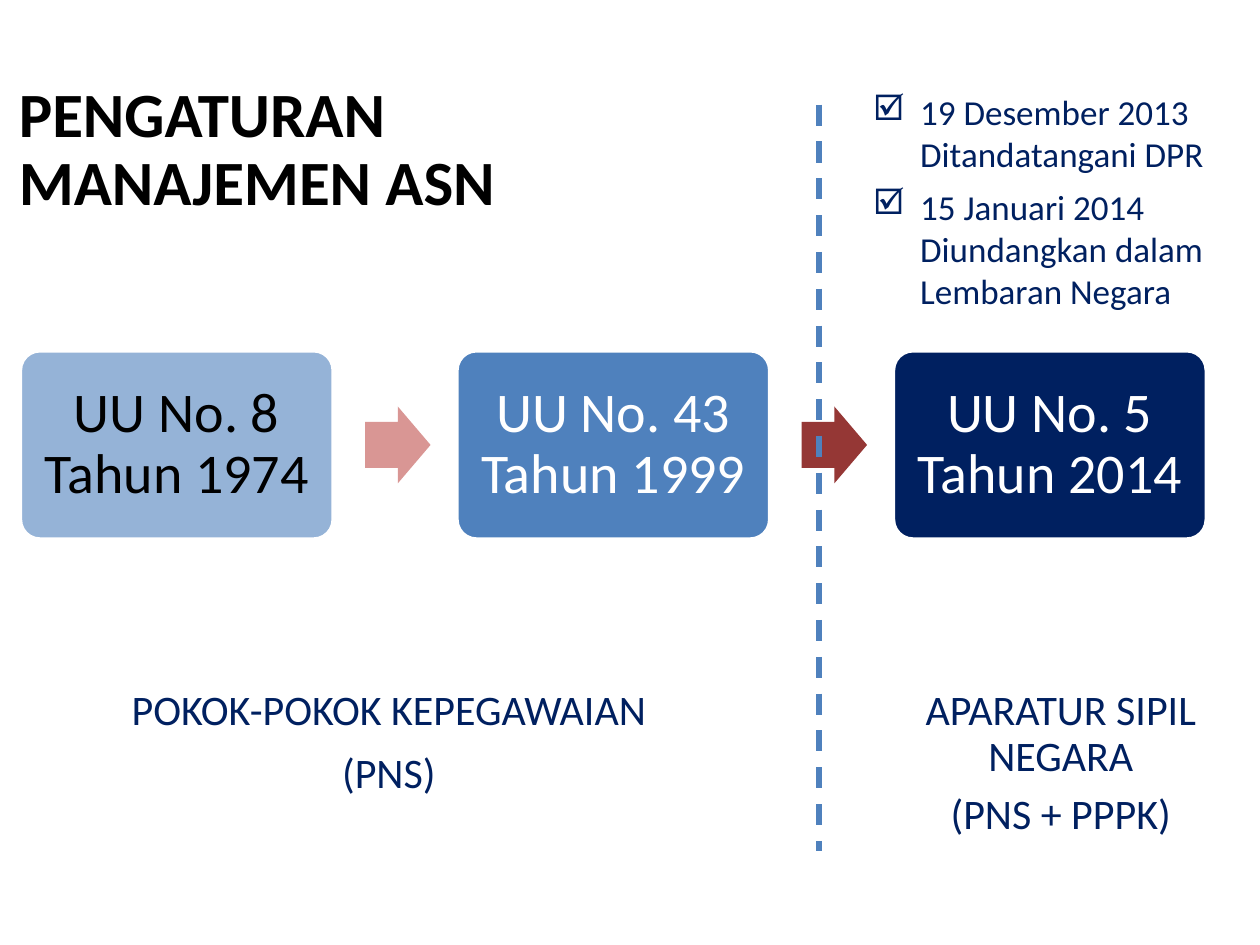
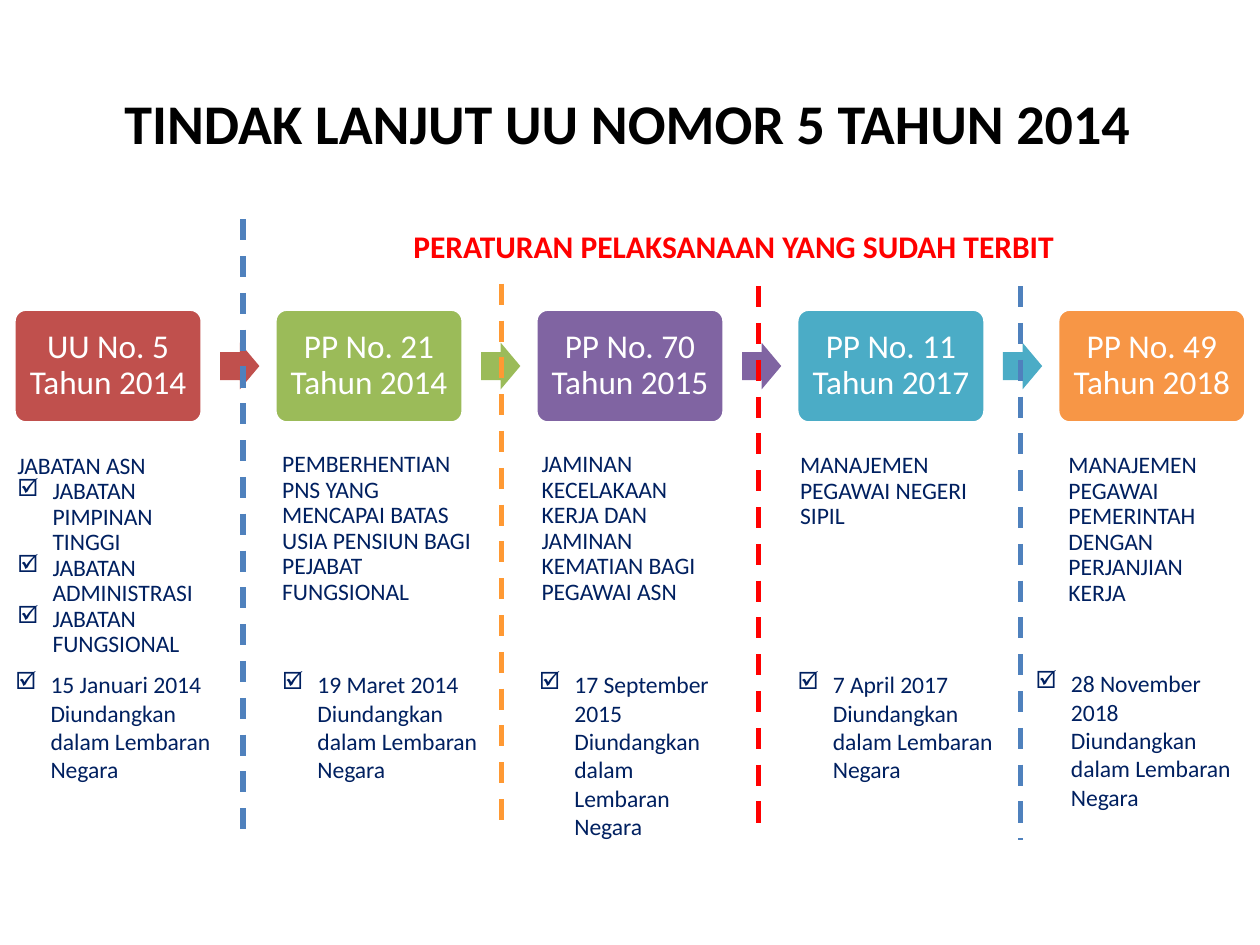
from dataclasses import dataclass

from lxml import etree
from pptx import Presentation
from pptx.dml.color import RGBColor
from pptx.enum.dml import MSO_LINE
from pptx.enum.shapes import MSO_CONNECTOR, MSO_SHAPE
from pptx.enum.text import MSO_ANCHOR, PP_ALIGN
from pptx.oxml.ns import qn
from pptx.shapes.base import BaseShape
from pptx.slide import Slide
from pptx.util import Cm, Pt

ROUND, ARROW = MSO_SHAPE.ROUNDED_RECTANGLE, MSO_SHAPE.RIGHT_ARROW
STRAIGHT, DASH = MSO_CONNECTOR.STRAIGHT, MSO_LINE.DASH
TOP, MIDDLE, BOTTOM = MSO_ANCHOR.TOP, MSO_ANCHOR.MIDDLE, MSO_ANCHOR.BOTTOM
LEFT, CENTER = PP_ALIGN.LEFT, PP_ALIGN.CENTER

FONT = "Calibri"
COLORS = {
    "black": "000000", "white": "FFFFFF", "navy": "002060", "pale": "95B3D7",
    "blue": "4F81BD", "pink": "D99694", "maroon": "953735", "brick": "C0504D",
    "green": "9BBB59", "purple": "8064A2", "teal": "4BACC6", "orange": "F79646",
    "amber": "FF9933", "red": "FF0000",
}
WIDE = (0.25, 0.13)
TIGHT = (0.18, 0.1)


@dataclass(frozen=True)
class Box:
    """Place on the slide, in centimetres."""
    left: float
    top: float
    width: float
    height: float

    def size(self) -> tuple[Cm, Cm, Cm, Cm]:
        return Cm(self.left), Cm(self.top), Cm(self.width), Cm(self.height)


@dataclass(frozen=True)
class Para:
    """A paragraph; an indent above zero gives it a check mark."""
    words: str
    gap: float = 0
    indent: float = 0


@dataclass(frozen=True)
class Step:
    words: str
    fill: str
    ink: str = "white"
    arrow: str = ""


@dataclass(frozen=True)
class Flow:
    """Row of equal steps: first box, pitch, and arrow size and offset."""
    first: Box
    pitch: float
    shift: float
    wide: float
    high: float
    inset: float
    size: float


@dataclass(frozen=True)
class Rule:
    x: float
    top: float
    end: float
    color: str


@dataclass(frozen=True)
class Note:
    box: Box
    words: str


def tint(name: str) -> RGBColor:
    return RGBColor.from_string(COLORS[name])


def write(shape: BaseShape, paras: list[Para], *, size: float,
          color: str = "navy", bold: bool = False, align: PP_ALIGN = LEFT,
          anchor: MSO_ANCHOR = TOP, inset: tuple[float, float] = WIDE,
          space: float = 0.9) -> None:
    frame = shape.text_frame
    frame.word_wrap = True
    frame.vertical_anchor = anchor
    frame.margin_left = frame.margin_right = Cm(inset[0])
    frame.margin_top = frame.margin_bottom = Cm(inset[1])
    for i, item in enumerate(paras):
        para = frame.add_paragraph() if i else frame.paragraphs[0]
        para.alignment = align
        para.line_spacing = space
        para.space_before = Pt(item.gap)
        if item.indent:
            props = para._p.get_or_add_pPr()
            props.set("marL", str(Cm(item.indent)))
            props.set("indent", str(-Cm(item.indent)))
            etree.SubElement(props, qn("a:buChar")).set("char", "☑")
        run = para.add_run()
        run.text = item.words
        run.font.name = FONT
        run.font.size = Pt(size)
        run.font.bold = bold
        run.font.color.rgb = tint(color)


def label(slide: Slide, box: Box, *paras: Para, **style) -> None:
    write(slide.shapes.add_textbox(*box.size()), list(paras), **style)


def title(slide: Slide, box: Box, words: str, size: float,
          anchor: MSO_ANCHOR) -> None:
    label(slide, box, Para(words), size=size, color="black", bold=True,
          anchor=anchor)


def block(slide: Slide, kind: MSO_SHAPE, box: Box, fill: str) -> BaseShape:
    shape = slide.shapes.add_shape(kind, *box.size())
    shape.shadow.inherit = False
    shape.fill.solid()
    shape.fill.fore_color.rgb = tint(fill)
    shape.line.fill.background()
    return shape


def chain(slide: Slide, flow: Flow, steps: list[Step]) -> None:
    """Draw the steps, with an arrow after each that names its colour."""
    first = flow.first
    for i, step in enumerate(steps):
        left = first.left + i * flow.pitch
        card = block(slide, ROUND, Box(left, first.top, first.width, first.height),
                     step.fill)
        card.adjustments[0] = 0.1
        card.line.color.rgb = tint("white")
        card.line.width = Pt(1)
        write(card, [Para(step.words)], size=flow.size, color=step.ink,
              align=CENTER, anchor=MIDDLE, inset=(flow.inset, flow.inset))
        if step.arrow:
            top = first.top + (first.height - flow.high) / 2
            arrow = block(slide, ARROW,
                          Box(left + flow.shift, top, flow.wide, flow.high),
                          step.arrow)
            arrow.adjustments[0] = 0.6
            arrow.adjustments[1] = 0.5


def divide(slide: Slide, rule: Rule) -> None:
    line = slide.shapes.add_connector(STRAIGHT, Cm(rule.x), Cm(rule.top),
                                      Cm(rule.x), Cm(rule.end))
    line.line.color.rgb = tint(rule.color)
    line.line.width = Pt(3)
    line.line.dash_style = DASH
    etree.SubElement(line._element.spPr, qn("a:effectLst"))


def laws(slide: Slide) -> None:
    title(slide, Box(0.13, 1.88, 13.13, 2.67), "PENGATURAN MANAJEMEN ASN", 36, BOTTOM)
    label(slide, Box(0.64, 13.77, 14.4, 2.97),
          Para("POKOK-POKOK KEPEGAWAIAN", 10), Para("(PNS)", 10),
          size=24, align=CENTER)
    chain(slide, Flow(Box(0.43, 7.09, 6.27, 3.76), 8.8, 6.93, 1.32, 1.55, 0.33, 32), [
        Step("UU No. 8 Tahun 1974", "pale", "black", "pink"),
        Step("UU No. 43 Tahun 1999", "blue", arrow="maroon"),
        Step("UU No. 5 Tahun 2014", "navy"),
    ])
    label(slide, Box(18.21, 13.77, 6.35, 2.97),
          Para("APARATUR SIPIL NEGARA", 7.5), Para("(PNS + PPPK)", 7.5),
          size=24, align=CENTER)
    divide(slide, Rule(16.51, 2.11, 17.15, "blue"))
    label(slide, Box(17.35, 1.7, 7.77, 3.99),
          Para("19 Desember 2013 Ditandatangani DPR", 6, 0.95),
          Para("15 Januari 2014 Diundangkan dalam Lembaran Negara", 6, 0.95),
          size=20, space=1)


def rules(slide: Slide) -> None:
    title(slide, Box(2.26, 1.96, 21.03, 1.17),
          "TINDAK LANJUT UU NOMOR 5 TAHUN 2014", 32, MIDDLE)
    posts = ["PIMPINAN TINGGI", "ADMINISTRASI", "FUNGSIONAL"]
    label(slide, Box(0.1, 9.02, 4.37, 3.6), Para("JABATAN ASN", 10),
          *[Para(f"JABATAN {post}", 0, 0.71) for post in posts], size=13.5)
    chain(slide, Flow(Box(0.3, 6.25, 3.76, 2.26), 5.26, 4.14, 0.79, 0.94, 0.2, 19), [
        Step("UU No. 5 Tahun 2014", "brick", arrow="brick"),
        Step("PP No. 21 Tahun 2014", "green", arrow="green"),
        Step("PP No. 70 Tahun 2015", "purple", arrow="purple"),
        Step("PP No. 11 Tahun 2017", "teal", arrow="teal"),
        Step("PP No. 49 Tahun 2018", "orange"),
    ])
    label(slide, Box(6.3, 4.22, 16.99, 1.57),
          Para("PERATURAN PELAKSANAAN YANG SUDAH TERBIT", 7.5), size=18,
          color="red", bold=True, align=CENTER, anchor=MIDDLE, inset=TIGHT)
    topics = [
        Note(Box(5.51, 9.02, 4.27, 2.24), "PEMBERHENTIAN PNS YANG MENCAPAI BATAS "
             "USIA PENSIUN BAGI PEJABAT FUNGSIONAL"),
        Note(Box(10.74, 9.02, 4.14, 2.24), "JAMINAN KECELAKAAN KERJA DAN JAMINAN "
             "KEMATIAN BAGI PEGAWAI ASN"),
        Note(Box(15.95, 9.04, 4.34, 2.24), "MANAJEMEN PEGAWAI NEGERI SIPIL"),
        Note(Box(21.36, 9.04, 3.73, 3.58),
             "MANAJEMEN PEGAWAI PEMERINTAH DENGAN PERJANJIAN KERJA"),
    ]
    for note in topics:
        label(slide, note.box, Para(note.words, 7.5), size=13.5, inset=TIGHT)
    dates = [
        Note(Box(0.13, 13.41, 4.78, 2.95), "15 Januari 2014"),
        Note(Box(5.51, 13.41, 4.78, 2.95), "19 Maret 2014"),
        Note(Box(10.69, 13.41, 4.27, 2.95), "17 September 2015"),
        Note(Box(15.9, 13.41, 4.5, 2.95), "7 April 2017"),
        Note(Box(20.7, 13.39, 4.5, 2.95), "28 November 2018"),
    ]
    for note in dates:
        label(slide, note.box,
              Para(f"{note.words} Diundangkan dalam Lembaran Negara", 4.5, 0.71),
              size=13.5, inset=TIGHT, space=1)
    for rule in (Rule(4.9, 4.42, 16.97, "blue"), Rule(10.11, 5.72, 16.76, "amber"),
                 Rule(15.29, 5.77, 16.76, "red"), Rule(20.57, 5.77, 16.94, "blue")):
        divide(slide, rule)


def main() -> None:
    deck = Presentation()
    deck.slide_width, deck.slide_height = Cm(25.4), Cm(19.05)
    blank = deck.slide_layouts[6]
    for draw in (laws, rules):
        draw(deck.slides.add_slide(blank))
    deck.save("out.pptx")


if __name__ == "__main__":
    main()
